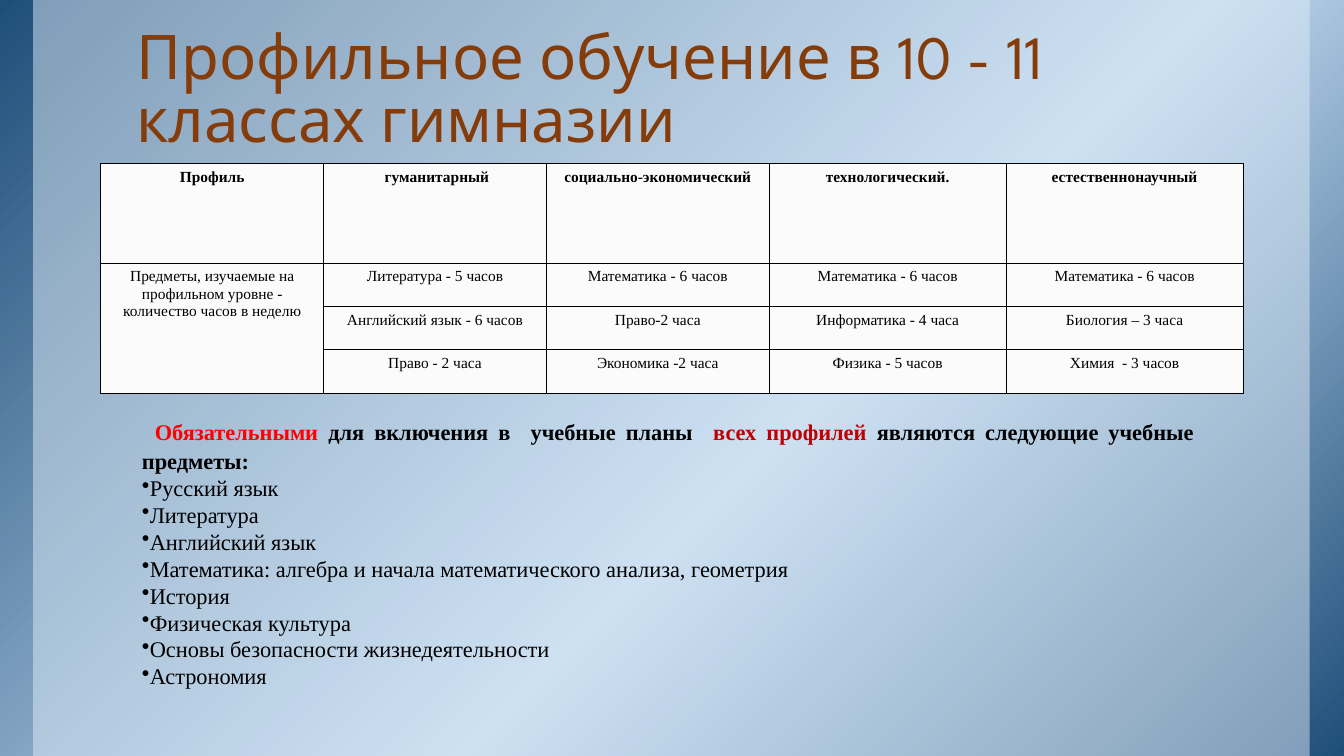
import pptx
import pptx.dml.color
import pptx.enum.shapes
import pptx.enum.text
import pptx.oxml
import pptx.oxml.ns
import pptx.util
from lxml import etree

Inches = pptx.util.Inches
Pt = pptx.util.Pt
Align = pptx.enum.text.PP_ALIGN
NAMESPACE = pptx.oxml.ns.nsdecls("a")
SERIF = "Times New Roman"
WIDTH, HEIGHT = 13.33, 7.5


def color(value):
    return pptx.dml.color.RGBColor.from_string(value)


def add_run(paragraph, text, hue="000000", **formats):
    run = paragraph.add_run()
    run.text = text
    for name, value in formats.items():
        setattr(run.font, name, value)
    run.font.color.rgb = color(hue)


presentation = pptx.Presentation()
presentation.slide_width = Inches(WIDTH)
presentation.slide_height = Inches(HEIGHT)
slide = presentation.slides.add_slide(presentation.slide_layouts[5])

# Backdrop: diagonal gradient and a translucent panel, both behind the title
stops = "".join(
    f'<a:gs pos="{share * 1000}"><a:srgbClr val="{hue}"/></a:gs>'
    for share, hue in [(0, "1F4E79"), (58, "BDD7EE"), (100, "1F4E79")])
gradient_fill = (f'<a:gradFill {NAMESPACE}><a:gsLst>{stops}</a:gsLst>'
                 '<a:lin ang="2700000" scaled="0"/></a:gradFill>')
panel_fill = (f'<a:solidFill {NAMESPACE}><a:srgbClr val="DEEBF7">'
              '<a:alpha val="50000"/></a:srgbClr></a:solidFill>')
backdrop = [(0, WIDTH, gradient_fill), (0.33, 12.66, panel_fill)]
for depth, (left, width, fill) in enumerate(backdrop):
    shape = slide.shapes.add_shape(
        pptx.enum.shapes.MSO_SHAPE.RECTANGLE,
        Inches(left), 0, Inches(width), Inches(HEIGHT))
    shape.shadow.inherit = False
    shape.line.fill.background()
    geometry = shape.element.spPr.find(pptx.oxml.ns.qn("a:prstGeom"))
    geometry.addnext(pptx.oxml.parse_xml(fill))
    shape.element.getparent().insert(2 + depth, shape.element)

# Title
title = slide.shapes.title
title.left, title.top = Inches(1.22), Inches(0.08)
title.width, title.height = Inches(11.11), Inches(1.53)
frame_format = {
    "word_wrap": True,
    "auto_size": pptx.enum.text.MSO_AUTO_SIZE.NONE,
    "vertical_anchor": pptx.enum.text.MSO_ANCHOR.BOTTOM,
    "margin_left": Inches(0.13), "margin_right": Inches(0.13),
    "margin_top": Inches(0.07), "margin_bottom": Inches(0.07),
}
for name, value in frame_format.items():
    setattr(title.text_frame, name, value)
paragraph = title.text_frame.paragraphs[0]
paragraph.alignment = Align.LEFT
paragraph.line_spacing = 0.85
add_run(paragraph, "Профильное обучение в 10 - 11 классах гимназии", "843C0B",
        name="League Spartan", size=Pt(44))

# Table of profiles and weekly hours
rows = [
    ["Профиль", " гуманитарный", "социально-экономический",
     "технологический.", "естественнонаучный"],
    ["Предметы, изучаемые на профильном уровне - количество часов в неделю",
     "Литература - 5 часов", "Математика - 6 часов",
     "Математика - 6 часов", "Математика - 6 часов"],
    ["", "Английский язык - 6 часов", "Право-2 часа",
     "Информатика - 4 часа", "Биология – 3 часа"],
    ["", "Право - 2 часа", "Экономика -2 часа",
     "Физика - 5 часов", "Химия  - 3 часов"],
]
column_widths = [2.21] * 3 + [2.35] * 2
row_heights = [0.99] + [0.43] * 3
table = slide.shapes.add_table(
    len(rows), len(column_widths), Inches(1), Inches(1.62),
    Inches(sum(column_widths)), Inches(sum(row_heights))).table
for column, width in zip(table.columns, column_widths):
    column.width = Inches(width)
for row, height in zip(table.rows, row_heights):
    row.height = Inches(height)
table.cell(1, 0).merge(table.cell(3, 0))

for row_index, row in enumerate(rows):
    for column_index, text in enumerate(row):
        cell = table.cell(row_index, column_index)
        for side in ("left", "right", "top", "bottom"):
            setattr(cell, f"margin_{side}", Inches(0.05))
        properties = cell._tc.get_or_add_tcPr()
        for edge in ("lnL", "lnR", "lnT", "lnB"):
            properties.append(pptx.oxml.parse_xml(
                f'<a:{edge} {NAMESPACE} w="9525"><a:solidFill>'
                f'<a:srgbClr val="000000"/></a:solidFill></a:{edge}>'))
        cell.fill.solid()
        cell.fill.fore_color.rgb = color("FBFBFB")
        paragraph = cell.text_frame.paragraphs[0]
        paragraph.alignment = Align.CENTER
        if text:
            add_run(paragraph, text, name=SERIF, size=Pt(11),
                    bold=row_index == 0)

# Compulsory subjects: lead sentence and bulleted list
subjects_box = slide.shapes.add_textbox(
    Inches(1.31), Inches(3.99), Inches(10.63), Inches(2.93))
frame = subjects_box.text_frame
frame.word_wrap = True
lead = frame.paragraphs[0]
lead.alignment = Align.JUSTIFY
add_run(lead, " ", name=SERIF, size=Pt(24))
for text, hue in [
    ("Обязательными", "FF0000"),
    (" для включения в  учебные планы ", "000000"),
    (" всех профилей", "C00000"),
    (" являются следующие учебные предметы:", "000000"),
]:
    add_run(lead, text, hue, name=SERIF, size=Pt(16), bold=True)

subjects = [
    "Русский язык",
    "Литература",
    "Английский язык",
    "Математика: алгебра и начала математического анализа, геометрия",
    "История",
    "Физическая культура",
    "Основы безопасности жизнедеятельности",
    "Астрономия",
]
for subject in subjects:
    paragraph = frame.add_paragraph()
    bullet = etree.SubElement(paragraph._p.get_or_add_pPr(),
                              pptx.oxml.ns.qn("a:buChar"))
    bullet.set("char", "•")
    add_run(paragraph, subject, name=SERIF, size=Pt(16))

presentation.save("out.pptx")
